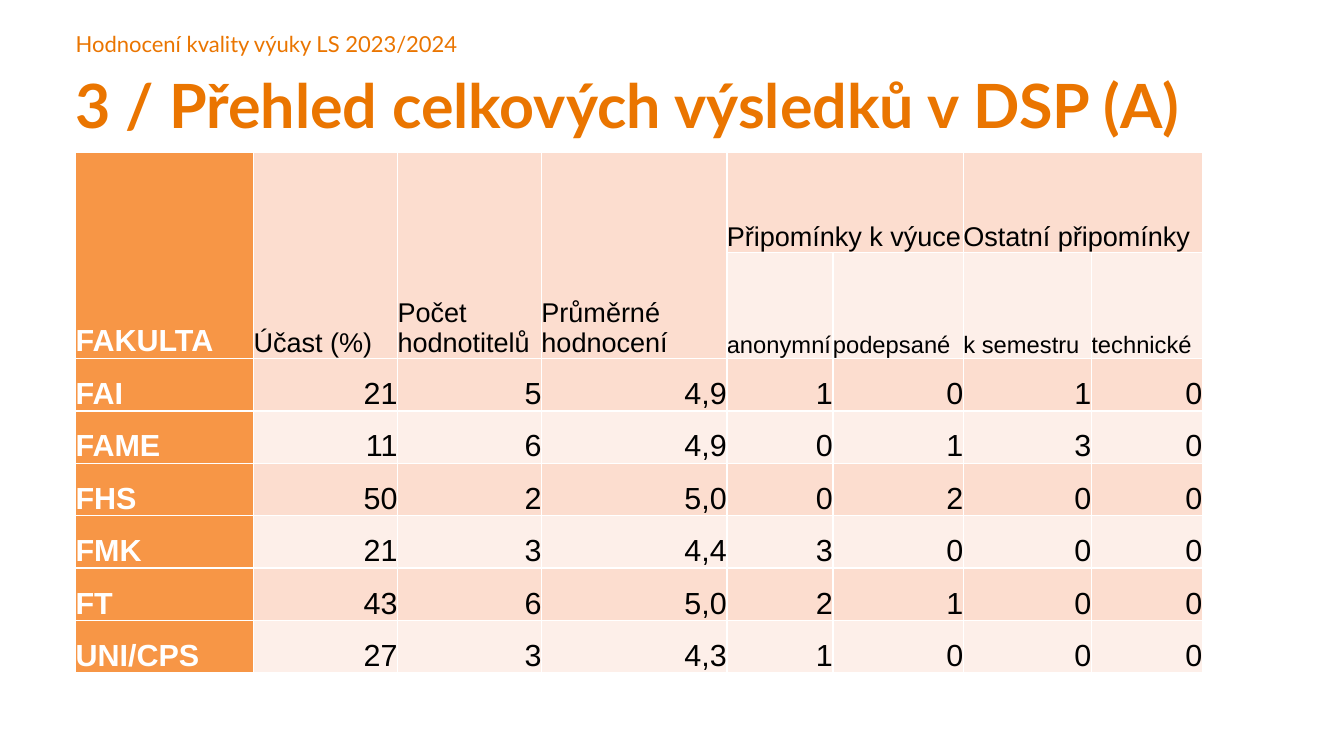
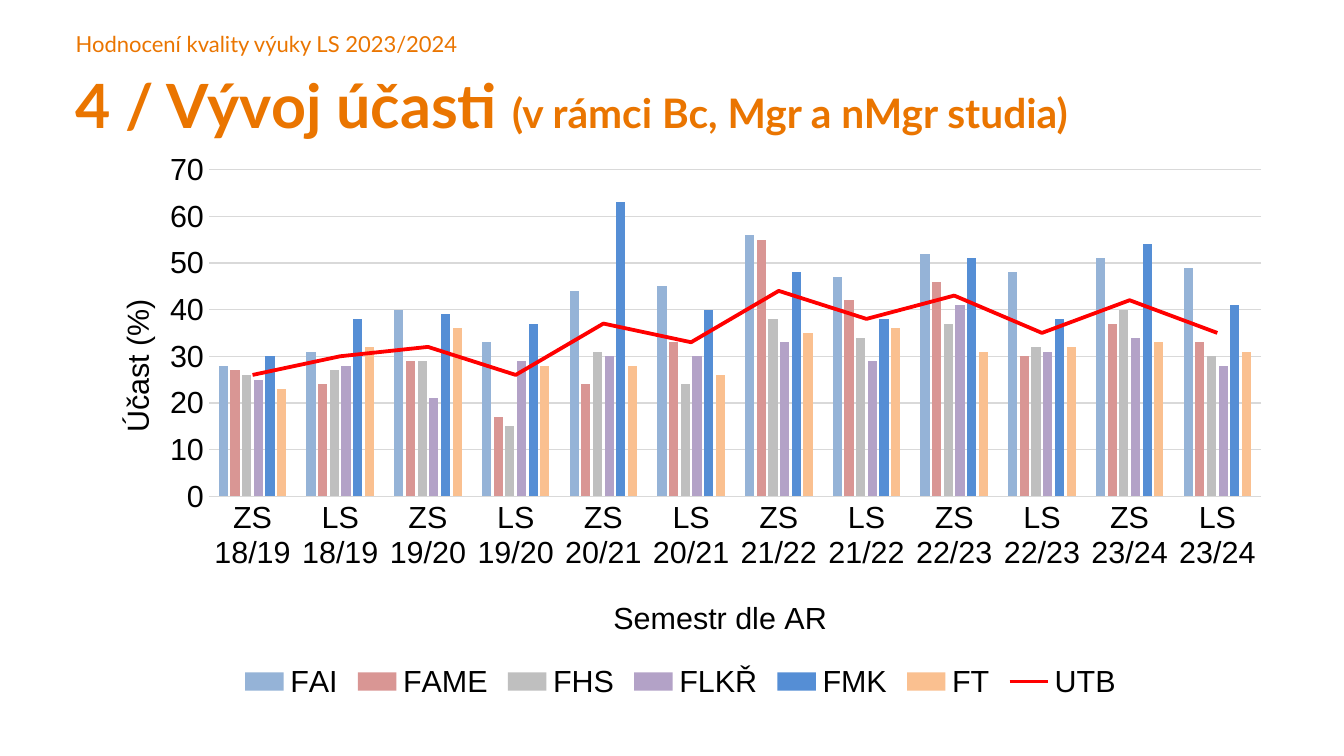
from lxml import etree
from pptx import Presentation
from pptx.chart.data import CategoryChartData
from pptx.dml.color import RGBColor
from pptx.enum.chart import XL_CHART_TYPE, XL_LEGEND_POSITION, XL_MARKER_STYLE, XL_TICK_MARK
from pptx.enum.text import MSO_ANCHOR, PP_ALIGN
from pptx.oxml import parse_xml
from pptx.oxml.ns import nsdecls, qn
from pptx.util import Inches, Pt

COLUMN = XL_CHART_TYPE.COLUMN_CLUSTERED
LEGEND_BOTTOM = XL_LEGEND_POSITION.BOTTOM
NO_MARKER = XL_MARKER_STYLE.NONE
NO_TICK = XL_TICK_MARK.NONE
BOTTOM = MSO_ANCHOR.BOTTOM
LEFT, RIGHT = PP_ALIGN.LEFT, PP_ALIGN.RIGHT

ORANGE = RGBColor(0xEA, 0x75, 0x00)
FACULTY_ORANGE = RGBColor(0xF7, 0x96, 0x46)
BANDS = (RGBColor(0xFC, 0xDD, 0xCF), RGBColor(0xFD, 0xEF, 0xE9))
WHITE = RGBColor(0xFF, 0xFF, 0xFF)
BLACK = RGBColor(0x00, 0x00, 0x00)
GRID_GREY = RGBColor(0xD9, 0xD9, 0xD9)
RED = RGBColor(0xFF, 0x00, 0x00)

TITLE_FONT = "Lato"
BODY_FONT = "Arial"
MARGIN = Inches(0.62)
CONTENT_WIDTH = Inches(9.92)
HEADING = "Hodnocení kvality výuky LS 2023/2024"


def add_text(paragraph, text, size=18, font=BODY_FONT, color=BLACK, bold=False, align=LEFT):
    paragraph.alignment = align
    run = paragraph.add_run()
    run.text = text
    run.font.size = Pt(size)
    run.font.name = font
    run.font.color.rgb = color
    run.font.bold = bold


def set_layout(parent, index, **parts):
    """Place a chart part by fractions of the chart area."""
    for old in parent.findall(qn("c:layout")):
        parent.remove(old)
    values = "".join(f'<c:{name} val="{value}"/>' for name, value in parts.items())
    parent.insert(index, parse_xml(
        f'<c:layout {nsdecls("c")}><c:manualLayout>{values}</c:manualLayout></c:layout>'))


presentation = Presentation()
presentation.slide_width = Inches(11.02)
presentation.slide_height = Inches(6.2)

# Shared heading and title; each title is a list of (text, size)
titles = [
    [("3 / Přehled celkových výsledků v DSP (A)", 36)],
    [("4 / Vývoj účasti ", 36), ("(v rámci Bc, Mgr a nMgr studia)", 24)],
]
slides = []
for title in titles:
    slide = presentation.slides.add_slide(presentation.slide_layouts[6])
    slides.append(slide)
    for top, height, runs, bold in ((0.25, 0.22, [(HEADING, 13)], False),
                                    (0.55, 0.61, title, True)):
        box = slide.shapes.add_textbox(MARGIN, Inches(top), CONTENT_WIDTH, Inches(height))
        frame = box.text_frame
        frame.word_wrap = True
        frame.margin_left = frame.margin_right = frame.margin_top = frame.margin_bottom = 0
        for text, size in runs:
            add_text(frame.paragraphs[0], text, size=size, font=TITLE_FONT,
                     color=ORANGE, bold=bold)
table_slide, chart_slide = slides

# Results table; None marks a cell covered by a merge
rows = [
    ["FAKULTA", "Účast (%)", "Počet hodnotitelů", "Průměrné hodnocení",
     "Připomínky k výuce", None, "Ostatní připomínky", None],
    [None, None, None, None, "anonymní", "podepsané", "k semestru", "technické"],
    ["FAI", "21", "5", "4,9", "1", "0", "1", "0"],
    ["FAME", "11", "6", "4,9", "0", "1", "3", "0"],
    ["FHS", "50", "2", "5,0", "0", "2", "0", "0"],
    ["FMK", "21", "3", "4,4", "3", "0", "0", "0"],
    ["FT", "43", "6", "5,0", "2", "1", "0", "0"],
    ["UNI/CPS", "27", "3", "4,3", "1", "0", "0", "0"],
]
column_widths = [1.46, 1.18, 1.18, 1.52, 0.87, 1.07, 1.05, 0.91]
row_heights = [0.82, 0.87] + [0.43] * 6
header_sizes = [16, 14]

table = table_slide.shapes.add_table(
    len(rows), len(column_widths), MARGIN, Inches(1.25),
    Inches(sum(column_widths)), Inches(sum(row_heights))).table
table.first_row = table.horz_banding = False
for column, width in zip(table.columns, column_widths):
    column.width = Inches(width)
for row, height in zip(table.rows, row_heights):
    row.height = Inches(height)

for row_index, values in enumerate(rows):
    is_header = row_index < len(header_sizes)
    for column_index, text in enumerate(values):
        cell = table.cell(row_index, column_index)
        is_faculty = column_index == 0
        cell.vertical_anchor = BOTTOM
        cell.margin_left = cell.margin_right = cell.margin_top = cell.margin_bottom = 0
        properties = cell._tc.get_or_add_tcPr()
        for side in ("lnL", "lnR", "lnT", "lnB"):
            properties.append(parse_xml(
                f'<a:{side} {nsdecls("a")} w="12700"><a:solidFill>'
                f'<a:srgbClr val="{WHITE}"/></a:solidFill></a:{side}>'))
        cell.fill.solid()
        cell.fill.fore_color.rgb = FACULTY_ORANGE if is_faculty else BANDS[row_index % 2]
        if text:
            add_text(cell.text_frame.paragraphs[0], text,
                     size=header_sizes[row_index] if is_header and not is_faculty else 18,
                     color=WHITE if is_faculty else BLACK, bold=is_faculty,
                     align=LEFT if is_header or is_faculty else RIGHT)

for column_index in range(4):
    table.cell(0, column_index).merge(table.cell(1, column_index))
for column_index in (4, 6):
    table.cell(0, column_index).merge(table.cell(0, column_index + 1))

# Participation chart: faculties as columns, the university as a line
faculties = [
    ("FAI", "95B3D7", [28, 31, 40, 33, 44, 45, 56, 47, 52, 48, 51, 49]),
    ("FAME", "D99694", [27, 24, 29, 17, 24, 33, 55, 42, 46, 30, 37, 33]),
    ("FHS", "BFBFBF", [26, 27, 29, 15, 31, 24, 38, 34, 37, 32, 40, 30]),
    ("FLKŘ", "B3A2C7", [25, 28, 21, 29, 30, 30, 33, 29, 41, 31, 34, 28]),
    ("FMK", "558ED5", [30, 38, 39, 37, 63, 40, 48, 38, 51, 38, 54, 41]),
    ("FT", "FAC090", [23, 32, 36, 28, 28, 26, 35, 36, 31, 32, 33, 31]),
]
chart_data = CategoryChartData()
chart_data.categories = [f"{term} {year}/{year + 1}"
                         for year in range(18, 24) for term in ("ZS", "LS")]
for name, _, values in faculties:
    chart_data.add_series(name, values)
chart_data.add_series("UTB", [26, 30, 32, 26, 37, 33, 44, 38, 43, 35, 42, 35])

chart = chart_slide.shapes.add_chart(
    COLUMN, MARGIN, Inches(1.16), CONTENT_WIDTH, Inches(4.62), chart_data).chart
chart.has_title = False
chart.font.size = Pt(10)
chart.font.name = BODY_FONT
chart.font.color.rgb = BLACK

columns = chart.plots[0]
columns.gap_width = 219
columns.overlap = -27
columns.vary_by_categories = False
for series, (_, color, _) in zip(columns.series, faculties):
    series.format.fill.solid()
    series.format.fill.fore_color.rgb = RGBColor.from_string(color)

# Move the last series to a line plot on the same axes
bar_chart = chart._chartSpace.find(".//" + qn("c:barChart"))
line_series = bar_chart.findall(qn("c:ser"))[-1]
for column_setting in line_series.findall(qn("c:invertIfNegative")):
    line_series.remove(column_setting)
line_chart = parse_xml(
    f'<c:lineChart {nsdecls("c")}><c:grouping val="standard"/>'
    '<c:varyColors val="0"/><c:marker val="1"/></c:lineChart>')
line_chart.insert(2, line_series)
for axis_id in bar_chart.findall(qn("c:axId")):
    etree.SubElement(line_chart, qn("c:axId")).set("val", axis_id.get("val"))
bar_chart.addnext(line_chart)
university = chart.plots[1].series[0]
university.smooth = False
university.marker.style = NO_MARKER
university.format.line.color.rgb = RED
university.format.line.width = Pt(2.25)

# Axes, legend and placement
category_axis, value_axis = chart.category_axis, chart.value_axis
for axis, title, left, top in ((category_axis, "Semestr dle AR", 0.44, 0.8),
                               (value_axis, "Účast (%)", 0.03, 0.27)):
    axis.major_tick_mark = axis.minor_tick_mark = NO_TICK
    axis.has_title = True
    add_text(axis.axis_title.text_frame.paragraphs[0], title)
    set_layout(axis.axis_title._element, 1, xMode="edge", yMode="edge", x=left, y=top)
value_axis.minimum_scale = 0
value_axis.maximum_scale = 70
value_axis.major_unit = 10
value_axis.has_major_gridlines = True
value_axis.format.line.fill.background()
for line in (category_axis.format.line, value_axis.major_gridlines.format.line):
    line.color.rgb = GRID_GREY
    line.width = Pt(0.75)

chart.has_legend = True
chart.legend.position = LEGEND_BOTTOM
chart.legend.include_in_layout = False
for font in (category_axis.tick_labels.font, value_axis.tick_labels.font, chart.legend.font):
    font.size = Pt(18)
    font.name = BODY_FONT
    font.color.rgb = BLACK
set_layout(bar_chart.getparent(), 0, layoutTarget="inner", xMode="edge", yMode="edge",
           x=0.11, y=0.05, w=0.87, h=0.58)

presentation.save("out.pptx")
